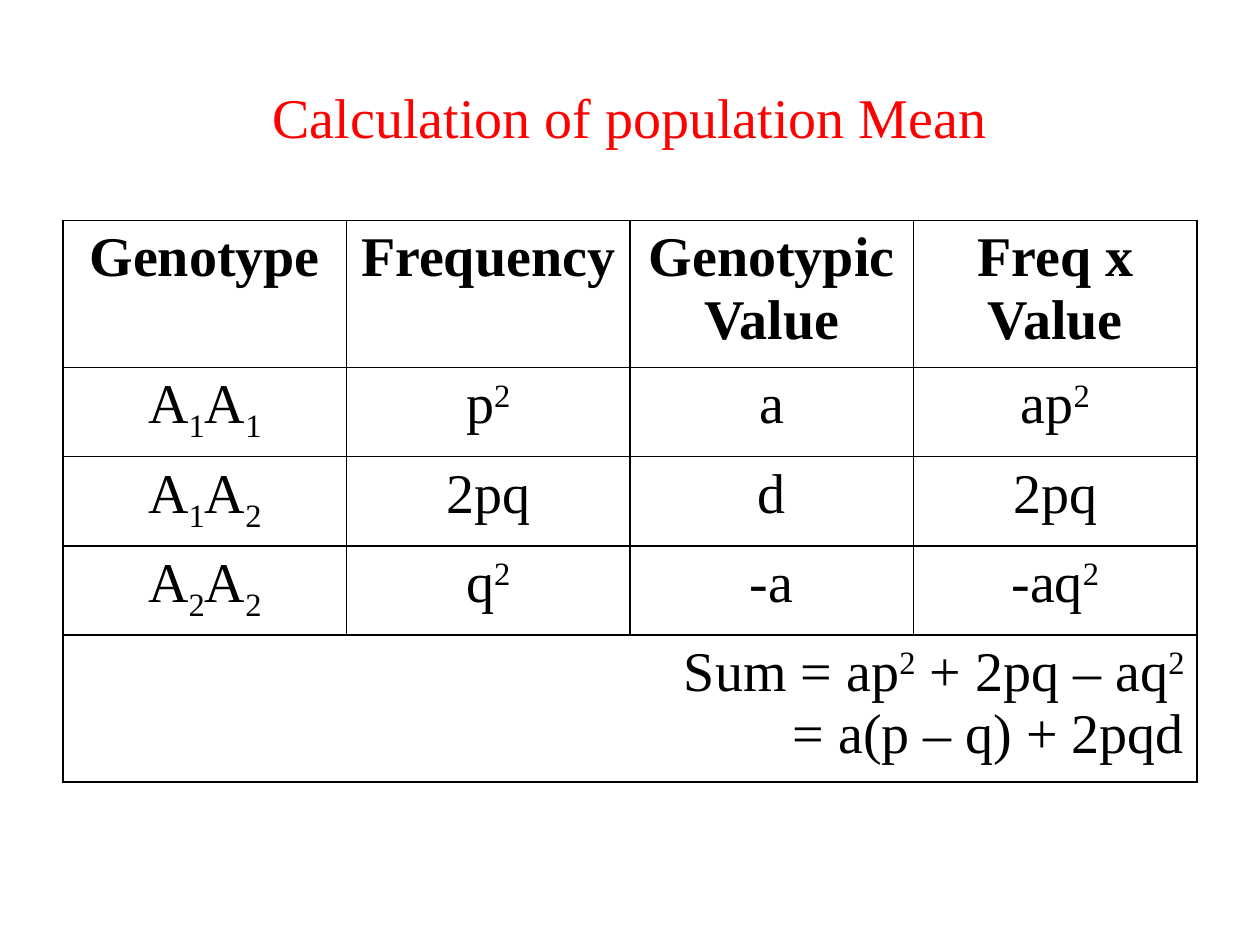
from pptx import Presentation, util as u
from pptx.dml.color import RGBColor
from pptx.enum import text as t
from pptx.oxml import parse_xml
from pptx.oxml.ns import nsdecls

THEME = {
    "title": {"name": "Times New Roman", "size": u.Pt(32), "bold": False, "color": "FF0000"},
    "head": {"name": "Times New Roman", "size": u.Pt(32), "bold": True, "color": "000000"},
    "body": {"name": "Times New Roman", "size": u.Pt(32), "bold": False, "color": "000000"},
    "rule": "000000",
}
SHIFT = {"^": "30000", "_": "-25000"}
ALIGN = t.PP_ALIGN


def write(para, line, style, align):
    """Write runs parted by |, where ^ raises a run and _ lowers it."""
    para.alignment = align
    for part in line.split("|"):
        run = para.add_run()
        run.text = part.lstrip("^_")
        for key, val in THEME[style].items():
            if key == "color":
                run.font.color.rgb = RGBColor.from_string(val)
            else:
                setattr(run.font, key, val)
        if part[0] in SHIFT:
            run._r.get_or_add_rPr().set("baseline", SHIFT[part[0]])


def frame(cell):
    """Clear the fill and rule all four sides of a cell."""
    cell.fill.background()
    props = cell._tc.get_or_add_tcPr()
    for spot, side in enumerate(("lnL", "lnR", "lnT", "lnB")):
        props.insert(spot, parse_xml(
            f'<a:{side} {nsdecls("a")} w="12700"><a:solidFill>'
            f'<a:srgbClr val="{THEME["rule"]}"/></a:solidFill></a:{side}>'))


deck = Presentation()
deck.slide_width, deck.slide_height = u.Inches(10), u.Inches(7.5)
slide = deck.slides.add_slide(deck.slide_layouts[6])
left, wide = u.Inches(0.5), u.Inches(9)

# Title
box = slide.shapes.add_textbox(left, u.Inches(0.3), wide, u.Inches(1.25)).text_frame
box.word_wrap = True
box.vertical_anchor = t.MSO_ANCHOR.MIDDLE
write(box.paragraphs[0], "Calculation of population Mean", "title", ALIGN.CENTER)

# Table grid: tall rows hold two lines of text
ROWS = [
    ["Genotype", "Frequency", "Genotypic Value", "Freq x Value"],
    ["A|_1|A|_1", "p|^2", "a", "ap|^2"],
    ["A|_1|A|_2", "2pq", "d", "2pq"],
    ["A|_2|A|_2", "q|^2", "-a", "-aq|^2"],
]
SUM = ["Sum = ap|^2| + 2pq – aq|^2", "= a(p – q) + 2pqd"]
TALL, LOW = u.Inches(1.09), u.Inches(0.66)
highs = [TALL, LOW, LOW, LOW, TALL]
grid = slide.shapes.add_table(len(highs), 4, left, u.Inches(1.75), wide, sum(highs)).table
grid.first_row = grid.horz_banding = False
for row, high in zip(grid.rows, highs):
    row.height = high
for cell in grid.iter_cells():
    frame(cell)

# Heading and genotype rows
for r, row in enumerate(ROWS):
    for c, line in enumerate(row):
        para = grid.cell(r, c).text_frame.paragraphs[0]
        write(para, line, "body" if r else "head", ALIGN.CENTER)

# Sum across the last row
total = grid.cell(4, 0)
total.merge(grid.cell(4, 3))
for n, line in enumerate(SUM):
    area = total.text_frame
    para = area.add_paragraph() if n else area.paragraphs[0]
    write(para, line, "body", ALIGN.RIGHT)

deck.save("out.pptx")
